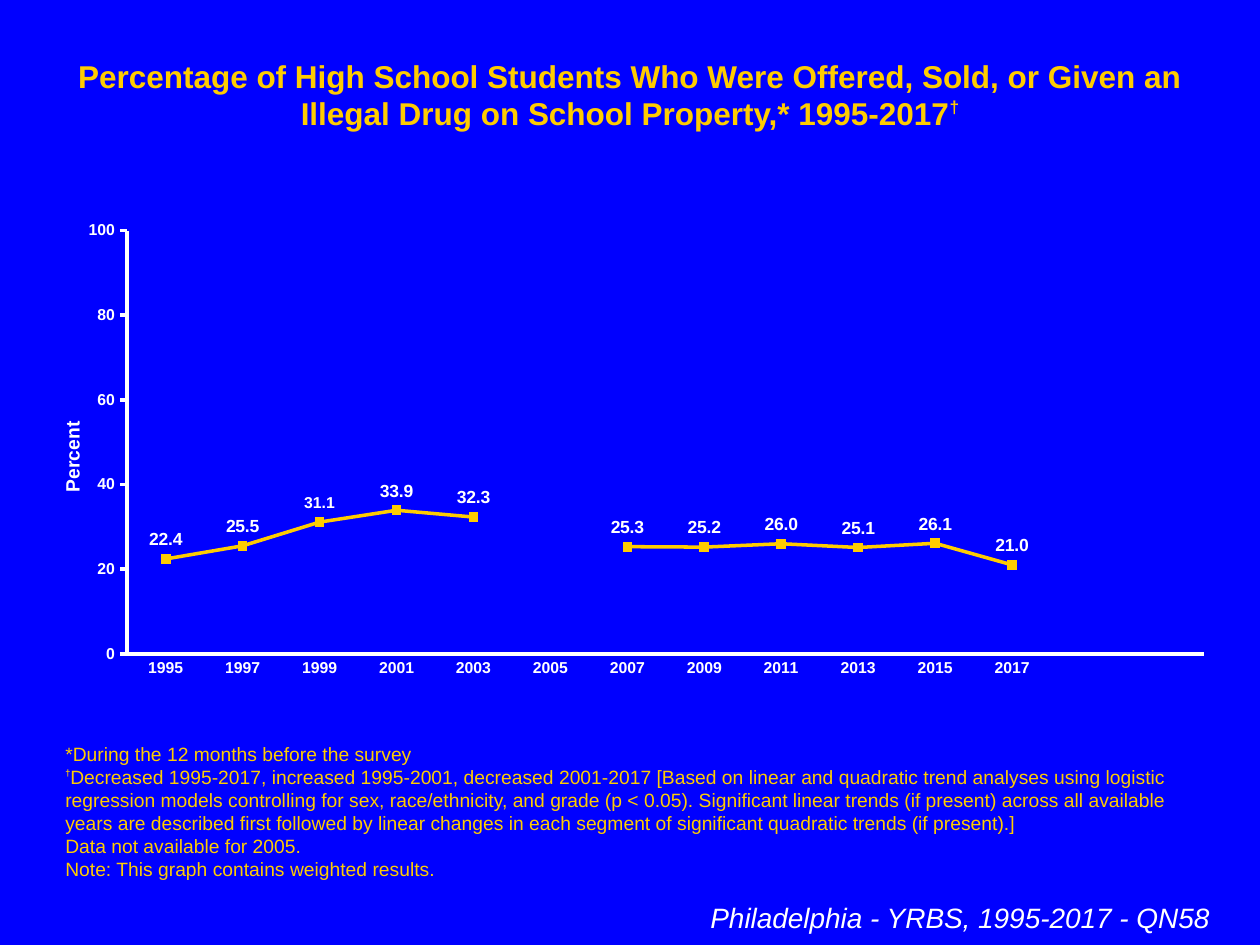
from lxml.etree import SubElement
from pptx import Presentation
from pptx.chart.data import CategoryChartData
from pptx.dml.color import RGBColor
from pptx.enum.chart import XL_CHART_TYPE, XL_LABEL_POSITION, XL_MARKER_STYLE, XL_TICK_MARK
from pptx.enum.text import MSO_ANCHOR, PP_ALIGN
from pptx.oxml import parse_xml
from pptx.oxml.ns import nsdecls, qn
from pptx.util import Inches, Pt

BLUE = RGBColor(0x00, 0x00, 0xFF)
GOLD = RGBColor(0xFF, 0xCC, 0x00)
WHITE = RGBColor(0xFF, 0xFF, 0xFF)
FONT = "Arial"
DAGGER = "†"

TITLE = [[
    "Percentage of High School Students Who Were Offered, Sold, or Given an "
    "Illegal Drug on School Property,* 1995-2017",
    DAGGER,
]]
FOOTNOTES = [
    ["*During the 12 months before the survey"],
    [
        DAGGER,
        "Decreased 1995-2017, increased 1995-2001, decreased 2001-2017 [Based on linear and "
        "quadratic trend analyses using logistic regression models controlling for sex, "
        "race/ethnicity, and grade (p < 0.05). Significant linear trends (if present) across "
        "all available years are described first followed by linear changes in each segment "
        "of significant quadratic trends (if present).]",
    ],
    ["Data not available for 2005."],
    ["Note: This graph contains weighted results."],
]
SOURCE = [["Philadelphia - YRBS, 1995-2017 - QN58"]]

YEARS = [str(year) for year in range(1995, 2018, 2)] + ["", ""]
PERCENTAGES = [22.4, 25.5, 31.1, 33.9, 32.3, None, 25.3, 25.2, 26.0, 25.1, 26.1, 21.0, None, None]
SMALL_LABEL_POINT = 2


def style_font(font, size, color=WHITE, bold=False, italic=False):
    font.name = FONT
    font.size = Pt(size)
    font.color.rgb = color
    font.bold = bold
    font.italic = italic


def add_text(slide, box, paragraphs, size, color, alignment=PP_ALIGN.LEFT,
             anchor=MSO_ANCHOR.TOP, bold=False, italic=False, dagger=(9, True, 50)):
    frame = slide.shapes.add_textbox(*map(Inches, box)).text_frame
    frame.word_wrap = True
    frame.vertical_anchor = anchor
    for index, runs in enumerate(paragraphs):
        paragraph = frame.add_paragraph() if index else frame.paragraphs[0]
        paragraph.alignment = alignment
        style_font(paragraph.font, size, color, bold, italic)
        for text in runs:
            run = paragraph.add_run()
            run.text = text
            if text == DAGGER:
                dagger_size, dagger_bold, raised = dagger
                run.font.size = Pt(dagger_size)
                run.font.bold = dagger_bold
                run._r.get_or_add_rPr().set("baseline", str(raised * 1000))


def set_layout(parent, position, **values):
    for old_layout in parent.findall(qn("c:layout")):
        parent.remove(old_layout)
    layout = parse_xml(f"<c:layout {nsdecls('c')}><c:manualLayout/></c:layout>")
    for tag, value in values.items():
        SubElement(layout[0], qn(f"c:{tag}")).set("val", str(value))
    parent.insert(position, layout)


def style_line(line, color):
    line.color.rgb = color
    line.width = Pt(2)


def add_trend_chart(slide):
    data = CategoryChartData(number_format="#,##0.0")
    data.categories = YEARS
    data.add_series("Series 1", PERCENTAGES)
    chart = slide.shapes.add_chart(
        XL_CHART_TYPE.LINE_MARKERS, Inches(0.25), Inches(1.67), Inches(9.5), Inches(4), data
    ).chart
    chart.has_legend = False
    chart.has_title = False
    style_font(chart.font, 18)
    set_layout(chart._chartSpace.chart.plotArea, 0, layoutTarget="inner",
               xMode="edge", yMode="edge", x=0.08, y=0.04, w=0.9, h=0.84)

    category_axis, value_axis = chart.category_axis, chart.value_axis
    for axis, tick in ((category_axis, XL_TICK_MARK.NONE), (value_axis, XL_TICK_MARK.OUTSIDE)):
        axis.has_major_gridlines = False
        axis.major_tick_mark = tick
        axis.minor_tick_mark = XL_TICK_MARK.NONE
        style_line(axis.format.line, WHITE)
        style_font(axis.tick_labels.font, 9, bold=True)
    value_axis.minimum_scale = 0
    value_axis.maximum_scale = 100
    value_axis.major_unit = 20
    value_axis.tick_labels.number_format = "#,##0"
    value_axis.tick_labels.number_format_is_linked = False

    axis_title = value_axis.axis_title
    axis_title.text_frame.text = "Percent"
    style_font(axis_title.text_frame.paragraphs[0].font, 11, bold=True)
    set_layout(axis_title._element, 1, xMode="edge", yMode="edge", x=0.02, y=0.41)

    plot = chart.plots[0]
    plot.vary_by_categories = False
    series = plot.series[0]
    series.smooth = False
    style_line(series.format.line, GOLD)
    marker = series.marker
    marker.style = XL_MARKER_STYLE.SQUARE
    marker.size = 5
    marker.format.fill.solid()
    marker.format.fill.fore_color.rgb = GOLD
    marker.format.line.color.rgb = GOLD

    labels = series.data_labels
    labels.show_value = True
    labels.number_format = "#,##0.0"
    labels.number_format_is_linked = False
    small_label = series.points[SMALL_LABEL_POINT].data_label
    for label, size in ((labels, 10), (small_label, 9)):
        style_font(label.font, size, bold=True)
        label.position = XL_LABEL_POSITION.ABOVE


def main():
    presentation = Presentation()
    presentation.slide_width = Inches(10)
    presentation.slide_height = Inches(7.5)
    slide = presentation.slides.add_slide(presentation.slide_layouts[6])
    slide.background.fill.solid()
    slide.background.fill.fore_color.rgb = BLUE

    add_text(slide, (0.5, 0.4, 9, 0.7), TITLE, 18, GOLD, PP_ALIGN.CENTER,
             bold=True, dagger=(17, True, 40))
    add_text(slide, (0.42, 5.84, 9.17, 1.2), FOOTNOTES, 11, GOLD, anchor=MSO_ANCHOR.BOTTOM)
    add_text(slide, (0.42, 7.1, 9.28, 0.37), SOURCE, 16, WHITE, PP_ALIGN.RIGHT, italic=True)
    add_trend_chart(slide)
    presentation.save("out.pptx")


if __name__ == "__main__":
    main()
